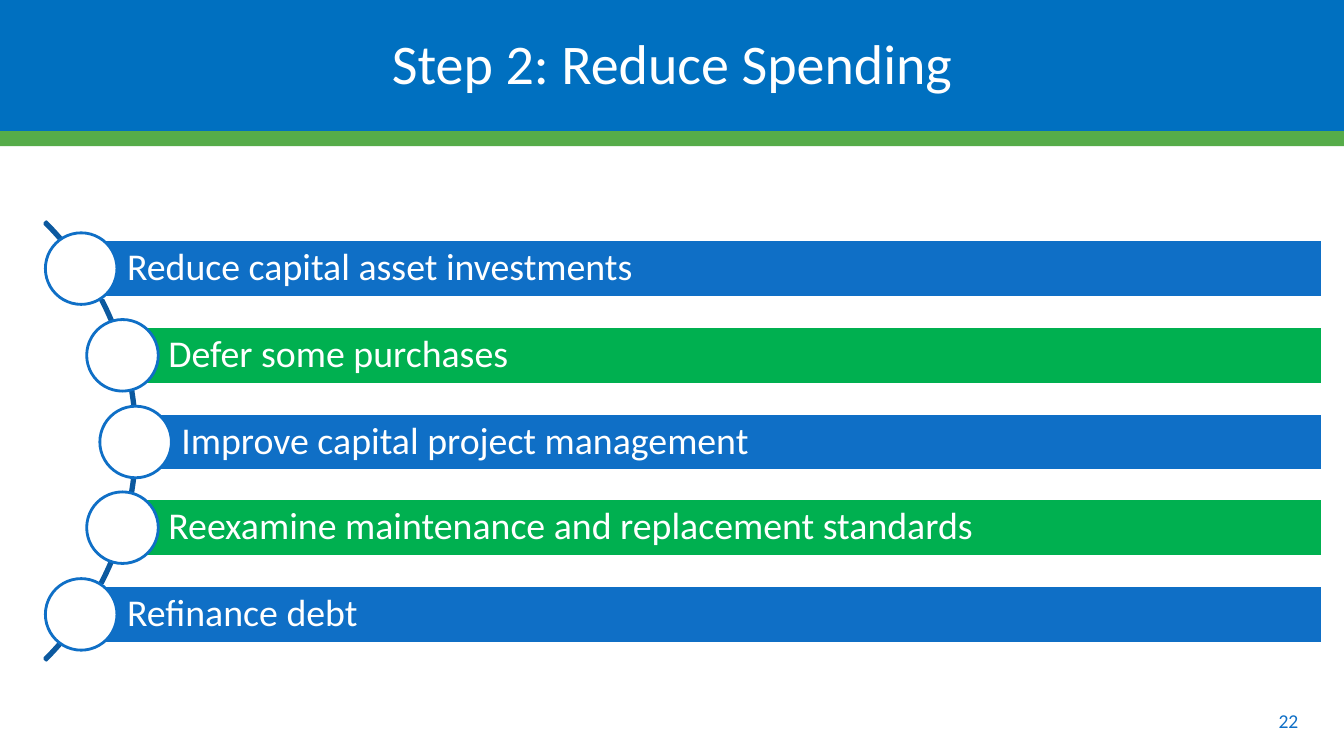
from dataclasses import dataclass

from pptx import Presentation
from pptx.dml.color import RGBColor
from pptx.enum.shapes import MSO_SHAPE as Geo
from pptx.enum.text import MSO_ANCHOR as Anchor, PP_ALIGN as Align
from pptx.shapes.autoshape import Shape
from pptx.util import Emu, Pt

PX = 9144
WHITE = RGBColor(0xFF, 0xFF, 0xFF)
BLUE = RGBColor(0x0F, 0x6F, 0xC6)
GREEN = RGBColor(0x00, 0xB0, 0x50)
ARC_BLUE = RGBColor(0x0C, 0x59, 0x9F)
TITLE_BLUE = RGBColor(0x00, 0x70, 0xC0)
RULE_GREEN = RGBColor(0x56, 0xAC, 0x49)

BAR_TOP, BAR_HEIGHT, BAR_RIGHT = 238, 57, 1312
BAR_SPAN = 343
CIRCLE = 71


@dataclass(frozen=True)
class Box:
    left: int
    top: int
    width: int
    height: int

    def emu(self) -> list[Emu]:
        return [Emu(v * PX) for v in (self.left, self.top, self.width, self.height)]


@dataclass(frozen=True)
class Step:
    label: str
    left: int
    color: RGBColor


@dataclass(frozen=True)
class TextStyle:
    size: int
    color: RGBColor
    align: Align
    insets: tuple[int, int, int, int]
    line_spacing: float = 0.9


TITLE_STYLE = TextStyle(40, WHITE, Align.CENTER, (10, 10, 10, 5))
STEP_STYLE = TextStyle(27, WHITE, Align.LEFT, (45, 7, 7, 7))
NUMBER_STYLE = TextStyle(14, BLUE, Align.CENTER, (10, 5, 10, 5), 1.0)

STEPS = [
    Step("Reduce capital asset investments", 81, BLUE),
    Step("Defer some purchases", 122, GREEN),
    Step("Improve capital project management", 135, BLUE),
    Step("Reexamine maintenance and replacement standards", 122, GREEN),
    Step("Refinance debt", 81, BLUE),
]


def add_shape(shapes, geo: Geo, box: Box, fill: RGBColor | None,
              line: RGBColor | None = None) -> Shape:
    s = shapes.add_shape(geo, *box.emu())
    s.shadow.inherit = False
    if fill is None:
        s.fill.background()
    else:
        s.fill.solid()
        s.fill.fore_color.rgb = fill
    if line is None:
        s.line.fill.background()
    else:
        s.line.color.rgb = line
        s.line.width = Pt(2)
    return s


def write(s: Shape, text: str, style: TextStyle) -> None:
    tf = s.text_frame
    left, top, right, bottom = (Emu(v * PX) for v in style.insets)
    frame_format = {
        "word_wrap": True, "vertical_anchor": Anchor.MIDDLE,
        "margin_left": left, "margin_top": top,
        "margin_right": right, "margin_bottom": bottom,
    }
    for name, value in frame_format.items():
        setattr(tf, name, value)
    p = tf.paragraphs[0]
    p.alignment = style.align
    p.line_spacing = style.line_spacing
    r = p.add_run()
    r.text = text
    for name, value in {"name": "Calibri", "size": Pt(style.size)}.items():
        setattr(r.font, name, value)
    r.font.color.rgb = style.color


def add_step(shapes, index: int, step: Step) -> None:
    top = BAR_TOP + round(index * BAR_SPAN / (len(STEPS) - 1))
    bar = Box(step.left, top, BAR_RIGHT - step.left, BAR_HEIGHT)
    write(add_shape(shapes, Geo.RECTANGLE, bar, step.color, WHITE), step.label, STEP_STYLE)
    circle = Box(step.left - CIRCLE // 2 - 1, top - (CIRCLE - BAR_HEIGHT) // 2, CIRCLE, CIRCLE)
    add_shape(shapes, Geo.OVAL, circle, WHITE, BLUE)


def main() -> None:
    prs = Presentation()
    prs.slide_width, prs.slide_height = Emu(1333 * PX), Emu(750 * PX)
    shapes = prs.slides.add_slide(prs.slide_layouts[6]).shapes

    add_shape(shapes, Geo.RECTANGLE, Box(0, 130, 1333, 15), RULE_GREEN)
    arc = add_shape(shapes, Geo.BLOCK_ARC, Box(-479, 130, 615, 615), None, ARC_BLUE)
    for i, value in enumerate((189, 27, 0.004)):
        arc.adjustments[i] = value
    for i, step in enumerate(STEPS):
        add_step(shapes, i, step)

    number = shapes.add_textbox(*Box(1228, 695, 100, 40).emu())
    write(number, "22", NUMBER_STYLE)
    title = add_shape(shapes, Geo.RECTANGLE, Box(0, -3, 1333, 133), TITLE_BLUE)
    write(title, "Step 2: Reduce Spending", TITLE_STYLE)

    prs.save("out.pptx")


if __name__ == "__main__":
    main()
